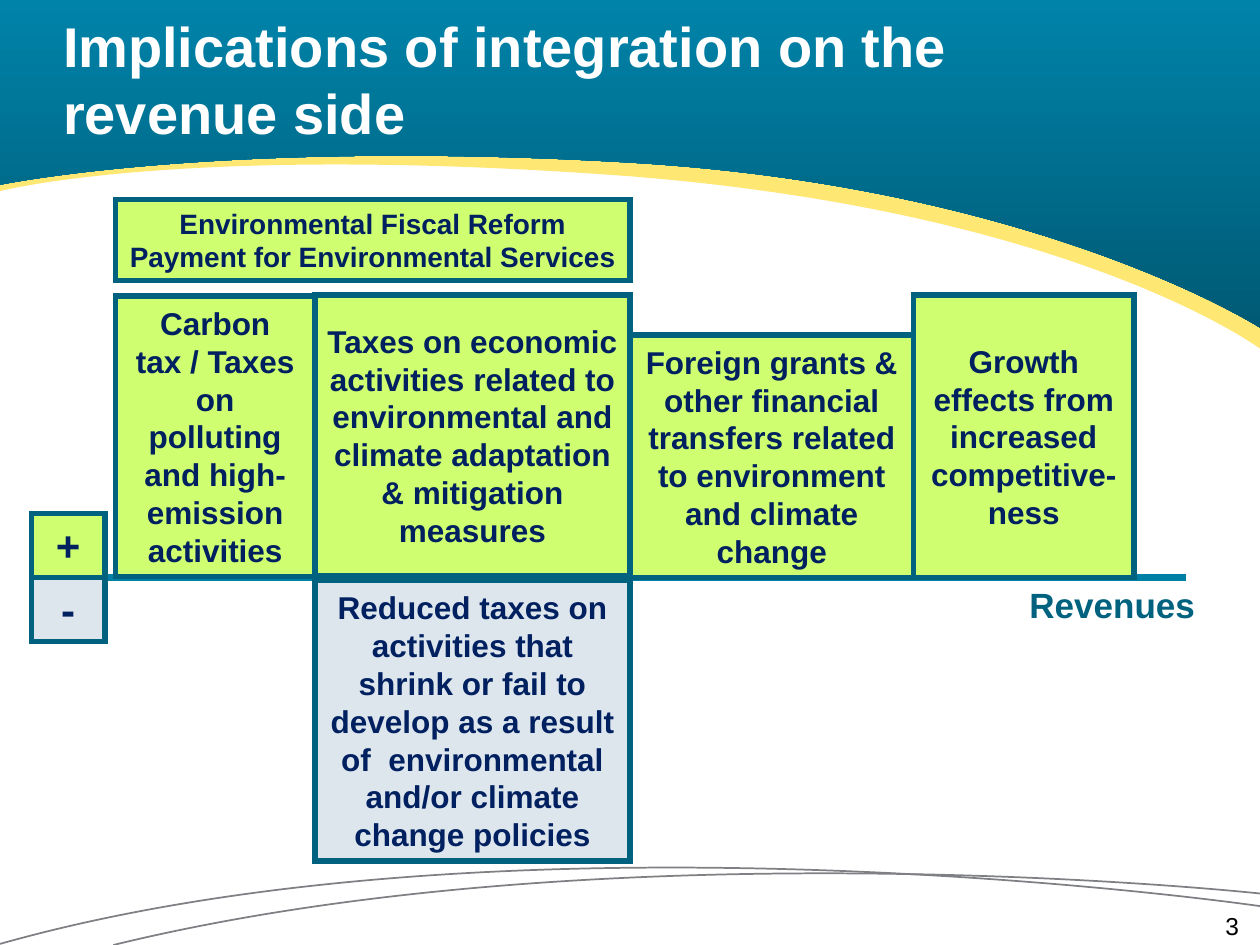
"""Build the slide on integration effects on the revenue side."""
from dataclasses import dataclass

from lxml.etree import Element, SubElement
from pptx import Presentation
from pptx.dml.color import RGBColor
from pptx.enum.shapes import MSO_CONNECTOR, MSO_SHAPE
from pptx.enum.text import MSO_ANCHOR, PP_ALIGN
from pptx.oxml.ns import qn
from pptx.shapes.autoshape import Shape
from pptx.slide import Slide
from pptx.text.text import TextFrame
from pptx.util import Inches, Pt

COLS, ROWS = 120, 90
GAIN, LOSS, EDGE, INK = "CFFF70", "DDE6ED", "00627F", "002060"
Point = tuple[float, float]


@dataclass
class Box:
    text: str
    col: float
    row: float
    cols: float
    rows: float
    fill: str = GAIN
    size: int = 18
    anchor: MSO_ANCHOR = MSO_ANCHOR.MIDDLE


@dataclass
class Curve:
    points: list[Point]
    color: str
    end_color: str = ""
    filled: bool = True


CURVES = [
    Curve([(120, 85.1), (120, 85.1), (58.2, 78.4), (10.8, 90)], "7E8083", filled=False),
    Curve([(120, 86.3), (120, 86.3), (49.2, 76), (0, 89.9)], "7E8083", filled=False),
    Curve([(120, 33.2), (120, 33.2), (102.5, 20.2), (60.1, 16.8),
           (17.6, 13.6), (0, 18.2), (0, 18.2)], "FFE774"),
    Curve([(120, 31.2), (120, 31.2), (99.1, 17.8), (60.1, 15.5),
           (21, 13.2), (0, 17.6), (0, 17.6)], "0083A9", "005A75"),
]

BOXES = [
    Box("+", 3, 48.9, 7, 6.1, size=24, anchor=MSO_ANCHOR.TOP),
    Box("-", 3, 55, 7, 6.1, LOSS, 24, MSO_ANCHOR.TOP),
    Box("Carbon tax / Taxes on polluting and high-emission activities",
        11, 28.2, 19, 26.7),
    Box("Taxes on economic activities related to environmental and climate "
        "adaptation & mitigation measures", 30, 28.1, 30, 26.7),
    Box("Foreign grants & other financial transfers related to environment "
        "and climate change", 60, 31.9, 27, 23.1),
    Box("Growth effects from increased competitive-ness", 87, 28.1, 21, 26.9),
    Box("Reduced taxes on activities that shrink or fail to develop as a result "
        "of  environmental and/or climate change policies",
        30, 55.3, 30, 26.7, LOSS),
    Box("Environmental Fiscal Reform\nPayment for Environmental Services",
        11, 19, 49, 7.7, size=16),
]


def rgb(value: str) -> RGBColor:
    """Turn a hex string into a colour."""
    return RGBColor.from_string(value)


def grid(*cells: float) -> list[int]:
    """Turn alternating columns and rows into lengths."""
    units = (Inches(10) / COLS, Inches(7.5) / ROWS)
    return [round(cell * units[i % 2]) for i, cell in enumerate(cells)]


def set_text(tf: TextFrame, text: str, size: int, color: str, align: PP_ALIGN,
             bold: bool = True, inset: float = 0.1) -> None:
    """Fill a text frame and format its runs."""
    tf.text = text
    tf.word_wrap = True
    tf.margin_left = tf.margin_right = Inches(inset)
    tf.margin_top = tf.margin_bottom = Inches(inset / 2)
    for p in tf.paragraphs:
        p.alignment = align
        for r in p.runs:
            r.font.name = "Arial"
            r.font.size = Pt(size)
            r.font.bold = bold
            r.font.color.rgb = rgb(color)


def bend(sp: Shape, count: int) -> None:
    """Join the first line segments, three at a time, into cubic curves."""
    lines = list(sp._element.iter(qn("a:lnTo")))[:count]
    for i in range(0, count, 3):
        cubic = Element(qn("a:cubicBezTo"))
        lines[i].addprevious(cubic)
        for line in lines[i:i + 3]:
            cubic.append(line[0])
            line.getparent().remove(line)


def add_curve(slide: Slide, curve: Curve) -> None:
    """Draw a curved line, or a band from the slide's top down to the curve."""
    corners = [(0, 0), (COLS, 0)] if curve.filled else []
    first, *rest = [tuple(grid(*point)) for point in curve.points + corners]
    builder = slide.shapes.build_freeform(*first)
    builder.add_line_segments(rest, close=curve.filled)
    sp = builder.convert_to_shape()
    bend(sp, len(curve.points) - 1)
    sp.shadow.inherit = False
    if not curve.filled:
        sp.fill.background()
        sp.line.color.rgb = rgb(curve.color)
        sp.line.width = Pt(1)
        return
    sp.line.fill.background()
    if curve.end_color:
        sp.fill.gradient()
        sp.fill.gradient_angle = 270
        for stop, color in zip(sp.fill.gradient_stops, (curve.color, curve.end_color)):
            stop.color.rgb = rgb(color)
    else:
        sp.fill.solid()
        sp.fill.fore_color.rgb = rgb(curve.color)


def add_box(slide: Slide, box: Box) -> None:
    """Draw one sharp-cornered box with centred text."""
    sp = slide.shapes.add_shape(MSO_SHAPE.RECTANGLE,
                                *grid(box.col, box.row, box.cols, box.rows))
    sp.shadow.inherit = False
    sp.fill.solid()
    sp.fill.fore_color.rgb = rgb(box.fill)
    sp.line.color.rgb = rgb(EDGE)
    sp.line.width = Pt(3)
    SubElement(sp._element.spPr.find(qn("a:ln")), qn("a:miter"), lim="800000")
    set_text(sp.text_frame, box.text, box.size, INK, PP_ALIGN.CENTER)
    sp.text_frame.vertical_anchor = box.anchor


def add_title(slide: Slide, text: str) -> None:
    """Place the title placeholder above the header band."""
    title = slide.shapes.title
    title.left, title.top, title.width, title.height = grid(6, 0, 112, 15)
    set_text(title.text_frame, text, 32, "FFFFFF", PP_ALIGN.LEFT, inset=0)
    title.text_frame.vertical_anchor = MSO_ANCHOR.MIDDLE
    slide.shapes._spTree.append(title._element)


def add_axis(slide: Slide) -> None:
    """Draw the revenue axis."""
    axis = slide.shapes.add_connector(MSO_CONNECTOR.STRAIGHT, *grid(7, 55, 113, 55))
    axis.line.color.rgb = rgb("0080A5")
    axis.line.width = Pt(4.5)
    SubElement(axis._element.spPr, qn("a:effectLst"))


def main() -> None:
    """Build and save the slide."""
    prs = Presentation()
    prs.slide_width, prs.slide_height = Inches(10), Inches(7.5)
    slide = prs.slides.add_slide(prs.slide_layouts[5])
    for curve in CURVES:
        add_curve(slide, curve)
    add_title(slide, "Implications of integration on the\vrevenue side")
    number = slide.shapes.add_textbox(*grid(90, 86.8, 28, 2.2))
    set_text(number.text_frame, "3", 14, "000000", PP_ALIGN.RIGHT, bold=False, inset=0)
    add_axis(slide)
    label = slide.shapes.add_textbox(*grid(91, 55, 24, 5.3))
    set_text(label.text_frame, "Revenues", 20, EDGE, PP_ALIGN.RIGHT)
    for box in BOXES:
        add_box(slide, box)
    prs.save("out.pptx")


if __name__ == "__main__":
    main()
